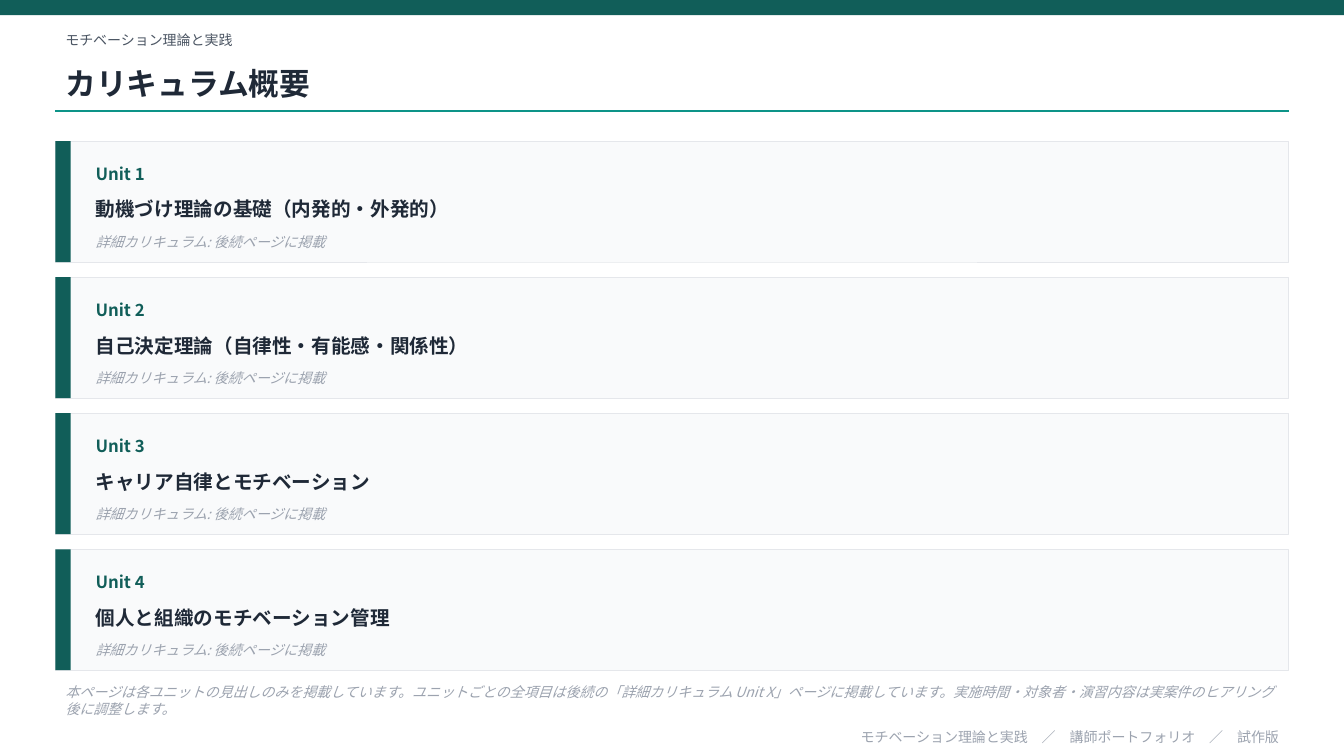
from dataclasses import dataclass

from lxml import etree
from pptx import Presentation
from pptx.dml.color import RGBColor
from pptx.enum.shapes import MSO_CONNECTOR, MSO_SHAPE
from pptx.enum.text import MSO_ANCHOR, PP_ALIGN
from pptx.oxml.ns import qn
from pptx.slide import Slide
from pptx.util import Pt

RECTANGLE = MSO_SHAPE.RECTANGLE
STRAIGHT = MSO_CONNECTOR.STRAIGHT
MIDDLE = MSO_ANCHOR.MIDDLE
LEFT, RIGHT = PP_ALIGN.LEFT, PP_ALIGN.RIGHT

FONT = "Noto Sans CJK JP"
WHITE = RGBColor(0xFF, 0xFF, 0xFF)
DEEP_TEAL = RGBColor(0x11, 0x5E, 0x59)
TEAL = RGBColor(0x0D, 0x94, 0x88)
INK = RGBColor(0x1F, 0x29, 0x37)
SLATE = RGBColor(0x4B, 0x55, 0x63)
MUTED = RGBColor(0x9C, 0xA3, 0xAF)
CARD_FILL = RGBColor(0xF9, 0xFA, 0xFB)
CARD_BORDER = RGBColor(0xE5, 0xE7, 0xEB)

SLIDE_WIDTH, SLIDE_HEIGHT = 960, 540
MARGIN = 39.6
CONTENT_WIDTH = SLIDE_WIDTH - 2 * MARGIN
BAR = 10.8
RULE_TOP = 79.2
CARD_TOP, CARD_HEIGHT, CARD_GAP = 100.8, 86.4, 10.8
CARD_TEXT_LEFT = 61.2
CARD_TEXT_WIDTH = 844.56

SUBJECT = "モチベーション理論と実践"
UNIT_DETAIL = "詳細カリキュラム: 後続ページに掲載"
UNIT_TITLES = (
    "動機づけ理論の基礎（内発的・外発的）",
    "自己決定理論（自律性・有能感・関係性）",
    "キャリア自律とモチベーション",
    "個人と組織のモチベーション管理",
)
NOTE = (
    "本ページは各ユニットの見出しのみを掲載しています。"
    "ユニットごとの全項目は後続の「詳細カリキュラム Unit X」ページに掲載しています。"
    "実施時間・対象者・演習内容は実案件のヒアリング後に調整します。"
)
FOOTER = f"{SUBJECT}　／　講師ポートフォリオ　／　試作版"


@dataclass(frozen=True)
class Box:
    left: float
    top: float
    width: float
    height: float

    def lengths(self) -> tuple[Pt, Pt, Pt, Pt]:
        return Pt(self.left), Pt(self.top), Pt(self.width), Pt(self.height)


@dataclass(frozen=True)
class TextStyle:
    size: float
    color: RGBColor
    bold: bool = False
    italic: bool = False


SUBJECT_STYLE = TextStyle(10, SLATE)
HEADING_STYLE = TextStyle(22, INK, bold=True)
UNIT_LABEL_STYLE = TextStyle(12, DEEP_TEAL, bold=True)
UNIT_TITLE_STYLE = TextStyle(14, INK, bold=True)
NOTE_STYLE = TextStyle(10, MUTED, italic=True)
FOOTER_STYLE = TextStyle(10, MUTED)


def add_rectangle(
    slide: Slide, box: Box, fill: RGBColor, border: RGBColor | None = None
) -> None:
    shape = slide.shapes.add_shape(RECTANGLE, *box.lengths())
    shape.shadow.inherit = False
    shape.fill.solid()
    shape.fill.fore_color.rgb = fill
    if border is None:
        shape.line.fill.background()
    else:
        shape.line.color.rgb = border
        shape.line.width = Pt(0.5)


def add_text(
    slide: Slide, box: Box, text: str, style: TextStyle, alignment: PP_ALIGN = LEFT
) -> None:
    frame = slide.shapes.add_textbox(*box.lengths()).text_frame
    frame.word_wrap = True
    frame.vertical_anchor = MIDDLE
    paragraph = frame.paragraphs[0]
    paragraph.alignment = alignment
    run = paragraph.add_run()
    run.text = text
    run.font.color.rgb = style.color
    font_values = {
        "name": FONT,
        "size": Pt(style.size),
        "bold": style.bold,
        "italic": style.italic,
    }
    for attribute, value in font_values.items():
        setattr(run.font, attribute, value)
    etree.SubElement(run._r.get_or_add_rPr(), qn("a:ea"), typeface=FONT)


def add_heading_rule(slide: Slide) -> None:
    rule = slide.shapes.add_connector(
        STRAIGHT, Pt(MARGIN), Pt(RULE_TOP), Pt(MARGIN + CONTENT_WIDTH), Pt(RULE_TOP)
    )
    rule.line.color.rgb = TEAL
    rule.line.width = Pt(1)
    etree.SubElement(rule._element.spPr, qn("a:effectLst"))


def add_unit_card(slide: Slide, number: int, title: str) -> None:
    top = CARD_TOP + (number - 1) * (CARD_HEIGHT + CARD_GAP)
    add_rectangle(
        slide, Box(MARGIN, top, CONTENT_WIDTH, CARD_HEIGHT), CARD_FILL, CARD_BORDER
    )
    add_rectangle(slide, Box(MARGIN, top, BAR, CARD_HEIGHT), DEEP_TEAL)
    rows = (
        (Box(CARD_TEXT_LEFT, top + 8.64, 108, 28.8), f"Unit {number}", UNIT_LABEL_STYLE),
        (Box(CARD_TEXT_LEFT, top + 32.4, CARD_TEXT_WIDTH, 32.4), title, UNIT_TITLE_STYLE),
        (Box(CARD_TEXT_LEFT, top + 61.2, CARD_TEXT_WIDTH, 21.6), UNIT_DETAIL, NOTE_STYLE),
    )
    for box, text, style in rows:
        add_text(slide, box, text, style)


def main() -> None:
    presentation = Presentation()
    presentation.slide_width = Pt(SLIDE_WIDTH)
    presentation.slide_height = Pt(SLIDE_HEIGHT)
    slide = presentation.slides.add_slide(presentation.slide_layouts[6])
    slide.background.fill.solid()
    slide.background.fill.fore_color.rgb = WHITE

    add_rectangle(slide, Box(0, 0, SLIDE_WIDTH, BAR), DEEP_TEAL)
    add_text(slide, Box(MARGIN, 18, CONTENT_WIDTH, 21.6), SUBJECT, SUBJECT_STYLE)
    add_text(
        slide, Box(MARGIN, 39.6, CONTENT_WIDTH, 39.6), "カリキュラム概要", HEADING_STYLE
    )
    add_heading_rule(slide)
    for number, title in enumerate(UNIT_TITLES, start=1):
        add_unit_card(slide, number, title)
    add_text(slide, Box(MARGIN, 486, CONTENT_WIDTH, 28.8), NOTE, NOTE_STYLE)
    add_text(
        slide, Box(MARGIN, 518.4, CONTENT_WIDTH, 15.84), FOOTER, FOOTER_STYLE, RIGHT
    )
    presentation.save("out.pptx")


if __name__ == "__main__":
    main()
